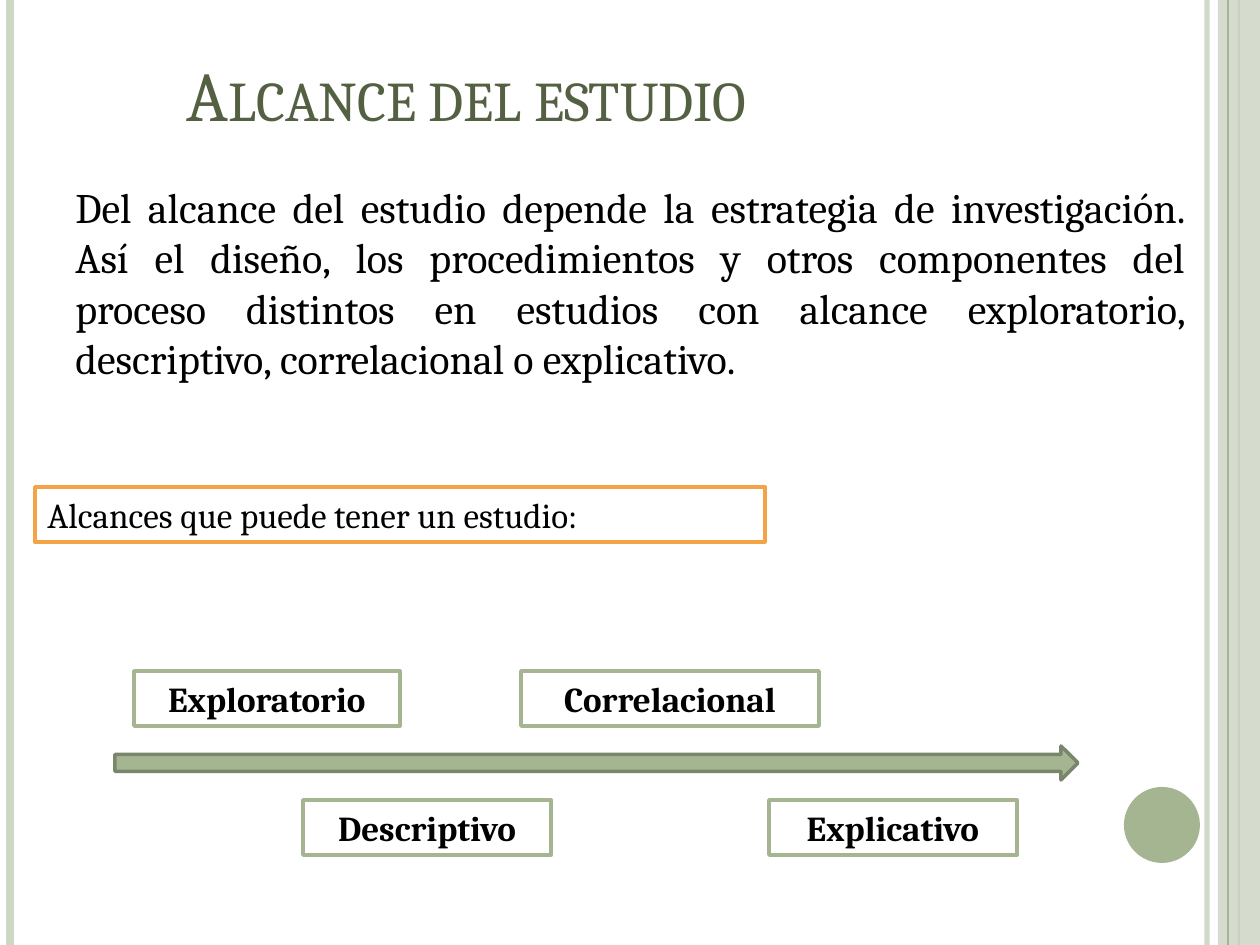
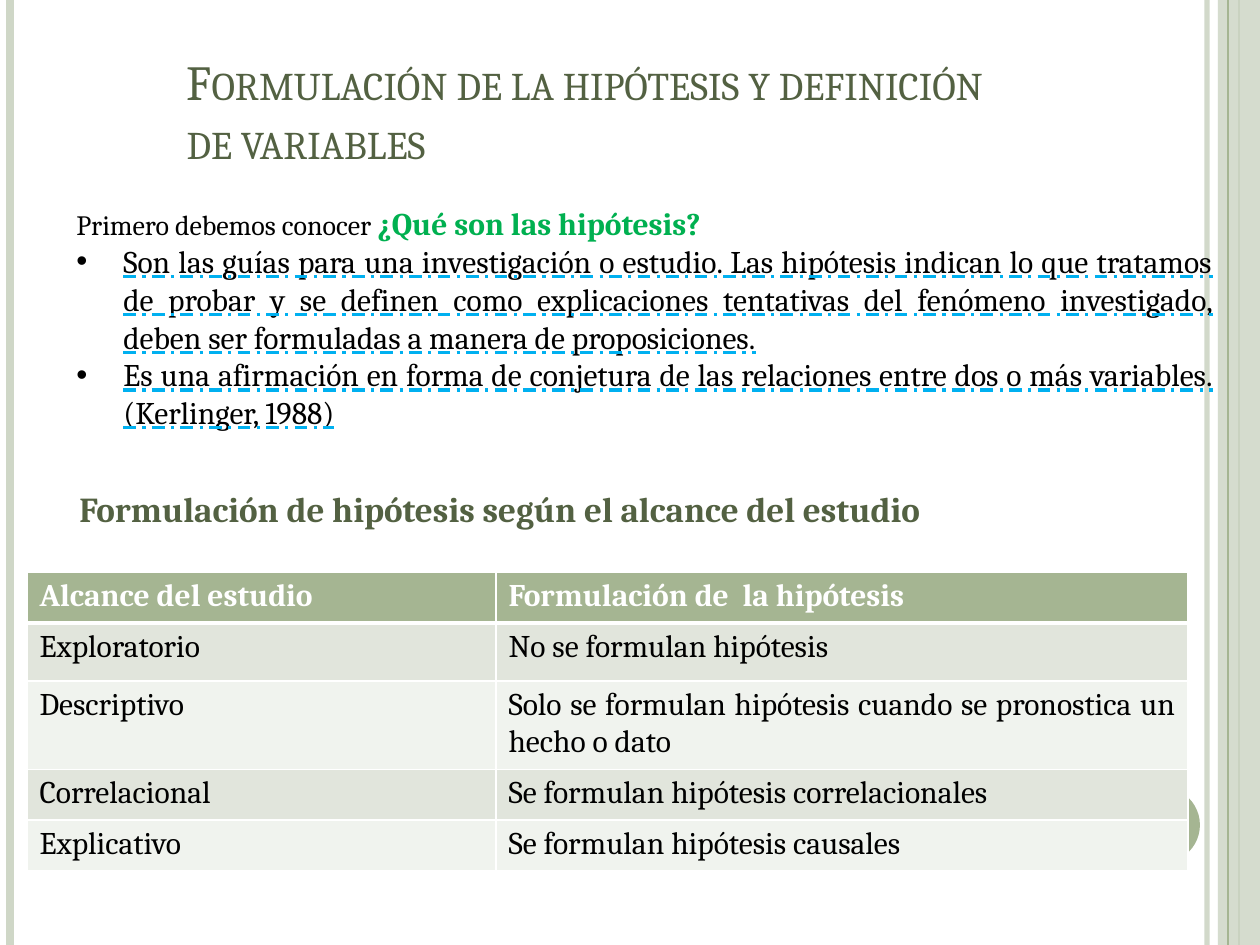
from dataclasses import dataclass

from lxml import etree
from pptx import Presentation
from pptx.dml.color import RGBColor
from pptx.enum.shapes import MSO_CONNECTOR, MSO_SHAPE
from pptx.enum.text import MSO_ANCHOR, MSO_AUTO_SIZE, MSO_UNDERLINE, PP_ALIGN
from pptx.oxml.ns import qn
from pptx.util import Emu, Pt

LEFT, CENTER, JUSTIFY = PP_ALIGN.LEFT, PP_ALIGN.CENTER, PP_ALIGN.JUSTIFY
TOP, MIDDLE = MSO_ANCHOR.TOP, MSO_ANCHOR.MIDDLE
STRAIGHT = MSO_CONNECTOR.STRAIGHT
RECTANGLE, ELLIPSE, RIGHT_ARROW = MSO_SHAPE.RECTANGLE, MSO_SHAPE.OVAL, MSO_SHAPE.RIGHT_ARROW
DOT_DASH = MSO_UNDERLINE.DOT_DASH_HEAVY_LINE
TITLE_ONLY = 5
EMU_PER_PX = 914400 / 126
SLIDE_WIDTH, SLIDE_HEIGHT = 1260, 945


@dataclass(frozen=True)
class Theme:
    font: str = "Cambria"
    white: RGBColor = RGBColor.from_string("FFFFFF")
    black: RGBColor = RGBColor.from_string("000000")
    heading: RGBColor = RGBColor.from_string("536142")
    sage: RGBColor = RGBColor.from_string("A5B592")
    pale_sage: RGBColor = RGBColor.from_string("CFD7C7")
    dark_sage: RGBColor = RGBColor.from_string("7A866C")
    orange: RGBColor = RGBColor.from_string("F3A447")
    question: RGBColor = RGBColor.from_string("00B050")
    underline: RGBColor = RGBColor.from_string("00B0F0")
    odd_row: RGBColor = RGBColor.from_string("E1E5DC")
    even_row: RGBColor = RGBColor.from_string("F0F3EE")
    title_size: int = 40
    long_title_size: int = 28
    lead_size: int = 24
    label_size: int = 20
    body_size: int = 18
    intro_size: int = 16


THEME = Theme()


def px(length):
    return Emu(round(length * EMU_PER_PX))


def place(left, top, width, height):
    return px(left), px(top), px(width), px(height)


def set_opacity(part, percent):
    for color in part._element.spPr.iter(qn("a:srgbClr")):
        etree.SubElement(color, qn("a:alpha"), val=str(percent * 1000))


def add_run(paragraph, text, size, color=THEME.black, bold=False):
    run = paragraph.add_run()
    run.text = text
    run.font.name = THEME.font
    run.font.size = Pt(size)
    run.font.color.rgb = color
    run.font.bold = bold
    return run


def underline_run(run):
    run.font.underline = DOT_DASH
    line_fill = etree.Element(qn("a:uFill"))
    solid = etree.SubElement(line_fill, qn("a:solidFill"))
    etree.SubElement(solid, qn("a:srgbClr"), val=str(THEME.underline))
    run.font._element.find(qn("a:latin")).addprevious(line_fill)


def add_bullet(paragraph):
    paragraph.alignment = JUSTIFY
    properties = paragraph._p.get_or_add_pPr()
    properties.set("marL", str(px(47)))
    properties.set("indent", str(-px(47)))
    etree.SubElement(properties, qn("a:buFont"), typeface="Arial")
    etree.SubElement(properties, qn("a:buChar"), char="•")


def add_rail(slide, x, color, width, opacity=100):
    rail = slide.shapes.add_connector(STRAIGHT, px(x), 0, px(x), px(SLIDE_HEIGHT))
    rail.line.color.rgb = color
    rail.line.width = Pt(width)
    etree.SubElement(rail._element.spPr, qn("a:effectLst"))
    if opacity < 100:
        set_opacity(rail, opacity)


def add_figure(slide, kind, box, fill, outline=None):
    figure = slide.shapes.add_shape(kind, *place(*box))
    figure.shadow.inherit = False
    figure.fill.solid()
    figure.fill.fore_color.rgb = fill
    if outline is None:
        figure.line.fill.background()
    else:
        figure.line.color.rgb = outline
        figure.line.width = Pt(2)
    return figure


def add_label(slide, box, text, outline, alignment=CENTER, bold=True):
    frame = add_figure(slide, RECTANGLE, box, THEME.white, outline).text_frame
    frame.word_wrap = True
    frame.vertical_anchor = TOP
    paragraph = frame.paragraphs[0]
    paragraph.alignment = alignment
    add_run(paragraph, text, THEME.label_size, bold=bold)


def add_text_area(slide, box, anchor=TOP):
    frame = slide.shapes.add_textbox(*place(*box)).text_frame
    frame.word_wrap = True
    frame.vertical_anchor = anchor
    return frame


def add_framed_slide(deck, title, title_size):
    slide = deck.slides.add_slide(deck.slide_layouts[TITLE_ONLY])
    add_rail(slide, 1207, THEME.pale_sage, 3, opacity=93)
    add_rail(slide, 10, THEME.pale_sage, 4.5)
    add_rail(slide, 1239, THEME.sage, 1.5)
    side_band = add_figure(slide, RECTANGLE, (1218, 0, 42, SLIDE_HEIGHT), THEME.pale_sage)
    set_opacity(side_band, 87)
    add_rail(slide, 1228, THEME.sage, 0.75)
    add_figure(slide, ELLIPSE, (1124, 787, 76, 76), THEME.sage)

    heading = slide.shapes.title
    heading.left, heading.top, heading.width, heading.height = place(174, 45, 874, 138)
    frame = heading.text_frame
    frame.word_wrap = True
    frame.auto_size = MSO_AUTO_SIZE.NONE
    frame.vertical_anchor = TOP
    frame.paragraphs[0].alignment = LEFT
    run = add_run(frame.paragraphs[0], title, title_size, THEME.heading)
    run.font._element.set("cap", "small")
    return slide


def set_borders(cell, top, bottom):
    properties = cell._tc.get_or_add_tcPr()
    for index, (side, width) in enumerate((("L", 1), ("R", 1), ("T", top), ("B", bottom))):
        border = etree.Element(qn(f"a:ln{side}"), w=str(Pt(width)))
        solid = etree.SubElement(border, qn("a:solidFill"))
        etree.SubElement(solid, qn("a:srgbClr"), val=str(THEME.white))
        properties.insert(index, border)


def add_scope_table(slide, rows, left, top, widths, heights):
    box = place(left, top, sum(widths), sum(heights))
    table = slide.shapes.add_table(len(rows), len(widths), *box).table
    for column, width in zip(table.columns, widths):
        column.width = px(width)
    for index, (row, height, texts) in enumerate(zip(table.rows, heights, rows)):
        row.height = px(height)
        header = index == 0
        fill = THEME.sage if header else THEME.odd_row if index % 2 else THEME.even_row
        for cell, text, alignment in zip(row.cells, texts, (LEFT, JUSTIFY)):
            cell.fill.solid()
            cell.fill.fore_color.rgb = fill
            set_borders(cell, top=3 if index == 1 else 1, bottom=3 if header else 1)
            paragraph = cell.text_frame.paragraphs[0]
            paragraph.alignment = alignment
            color = THEME.white if header else THEME.black
            add_run(paragraph, text, THEME.body_size, color, bold=header)


def build_scope_slide(deck):
    slide = add_framed_slide(deck, "Alcance del estudio", THEME.title_size)
    lead = add_text_area(slide, (63, 175, 1134, 362)).paragraphs[0]
    lead.alignment = JUSTIFY
    lead.space_before = Pt(6)
    add_run(
        lead,
        "Del alcance del estudio depende la estrategia de investigación. Así el diseño, "
        "los procedimientos y otros componentes del proceso distintos en estudios con "
        "alcance exploratorio, descriptivo, correlacional o explicativo.",
        THEME.lead_size,
    )
    add_label(slide, (35, 487, 730, 55), "Alcances que puede tener un estudio:",
              THEME.orange, LEFT, bold=False)
    add_figure(slide, RIGHT_ARROW, (115, 746, 963, 34), THEME.sage, THEME.dark_sage)
    above_arrow, below_arrow = 671, 800
    for scope, left, top, width in (
        ("Exploratorio", 134, above_arrow, 266),
        ("Correlacional", 521, above_arrow, 298),
        ("Descriptivo", 303, below_arrow, 248),
        ("Explicativo", 769, below_arrow, 248),
    ):
        add_label(slide, (left, top, width, 55), scope, THEME.sage)


def build_hypothesis_slide(deck):
    slide = add_framed_slide(
        deck, "Formulación de la hipótesis y definición de variables", THEME.long_title_size
    )
    definition = add_text_area(slide, (64, 198, 1161, 242))
    question = definition.paragraphs[0]
    add_run(question, "Primero debemos conocer ", THEME.intro_size)
    add_run(question, "¿Qué son las hipótesis?", THEME.body_size, THEME.question, bold=True)
    for statement in (
        "Son las guías para una investigación o estudio. Las hipótesis indican lo que "
        "tratamos de probar y se definen como explicaciones tentativas del fenómeno "
        "investigado, deben ser formuladas a manera de proposiciones.",
        "Es una afirmación en forma de conjetura de las relaciones entre dos o más "
        "variables. (Kerlinger, 1988)",
    ):
        paragraph = definition.add_paragraph()
        add_bullet(paragraph)
        underline_run(add_run(paragraph, statement, THEME.body_size))

    subtitle = add_text_area(slide, (67, 473, 1081, 71), MIDDLE).paragraphs[0]
    add_run(subtitle, "Formulación de hipótesis según el alcance del estudio",
            THEME.label_size, THEME.heading, bold=True)
    add_scope_table(
        slide,
        (
            ("Alcance del estudio", "Formulación de  la hipótesis"),
            ("Exploratorio", "No se formulan hipótesis"),
            ("Descriptivo",
             "Solo se formulan hipótesis cuando se pronostica un hecho o dato"),
            ("Correlacional", "Se formulan hipótesis correlacionales"),
            ("Explicativo", "Se formulan hipótesis causales"),
        ),
        left=27,
        top=572,
        widths=(469, 692),
        heights=(51, 58, 88, 51, 51),
    )


def main():
    deck = Presentation()
    deck.slide_width = px(SLIDE_WIDTH)
    deck.slide_height = px(SLIDE_HEIGHT)
    build_scope_slide(deck)
    build_hypothesis_slide(deck)
    deck.save("out.pptx")


if __name__ == "__main__":
    main()
